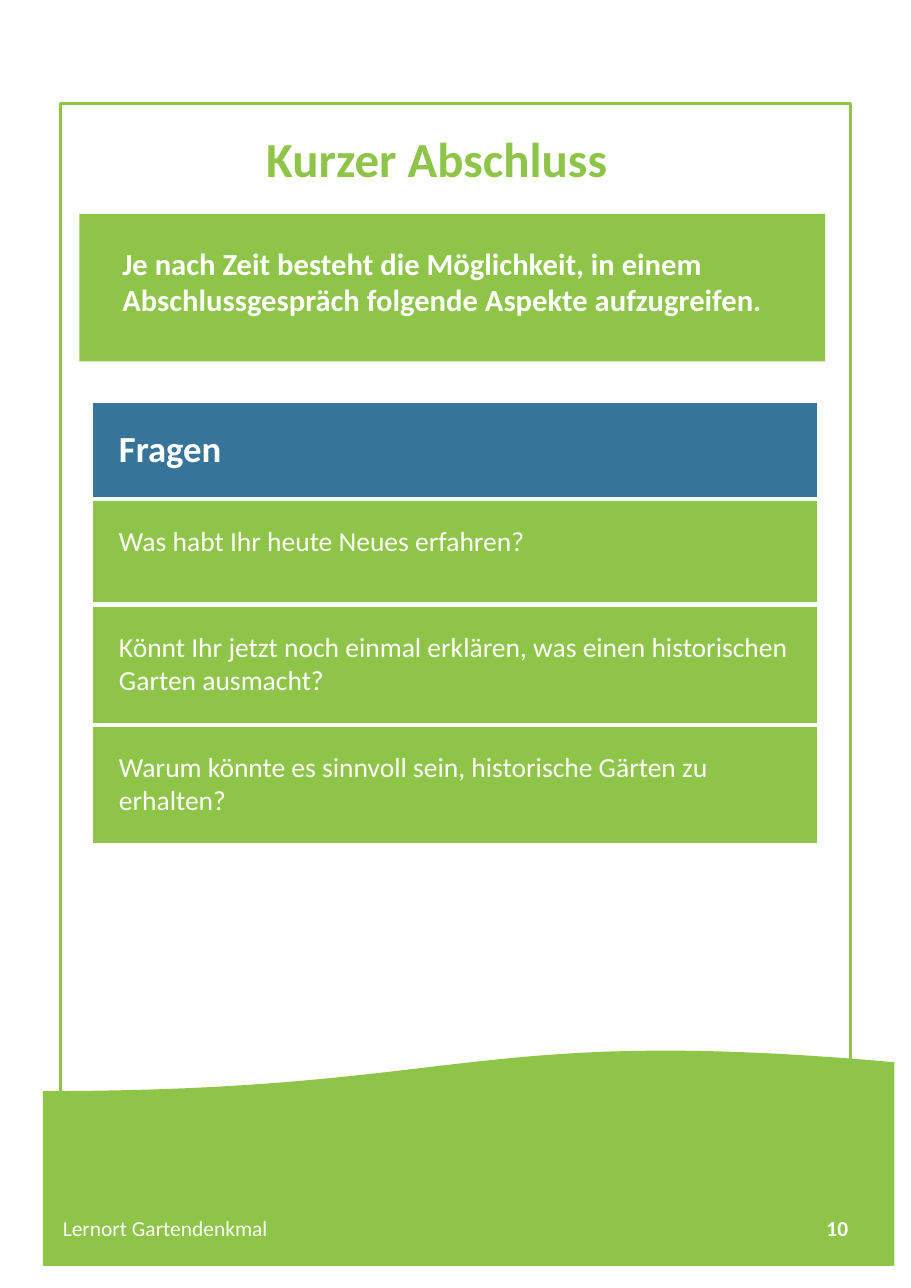
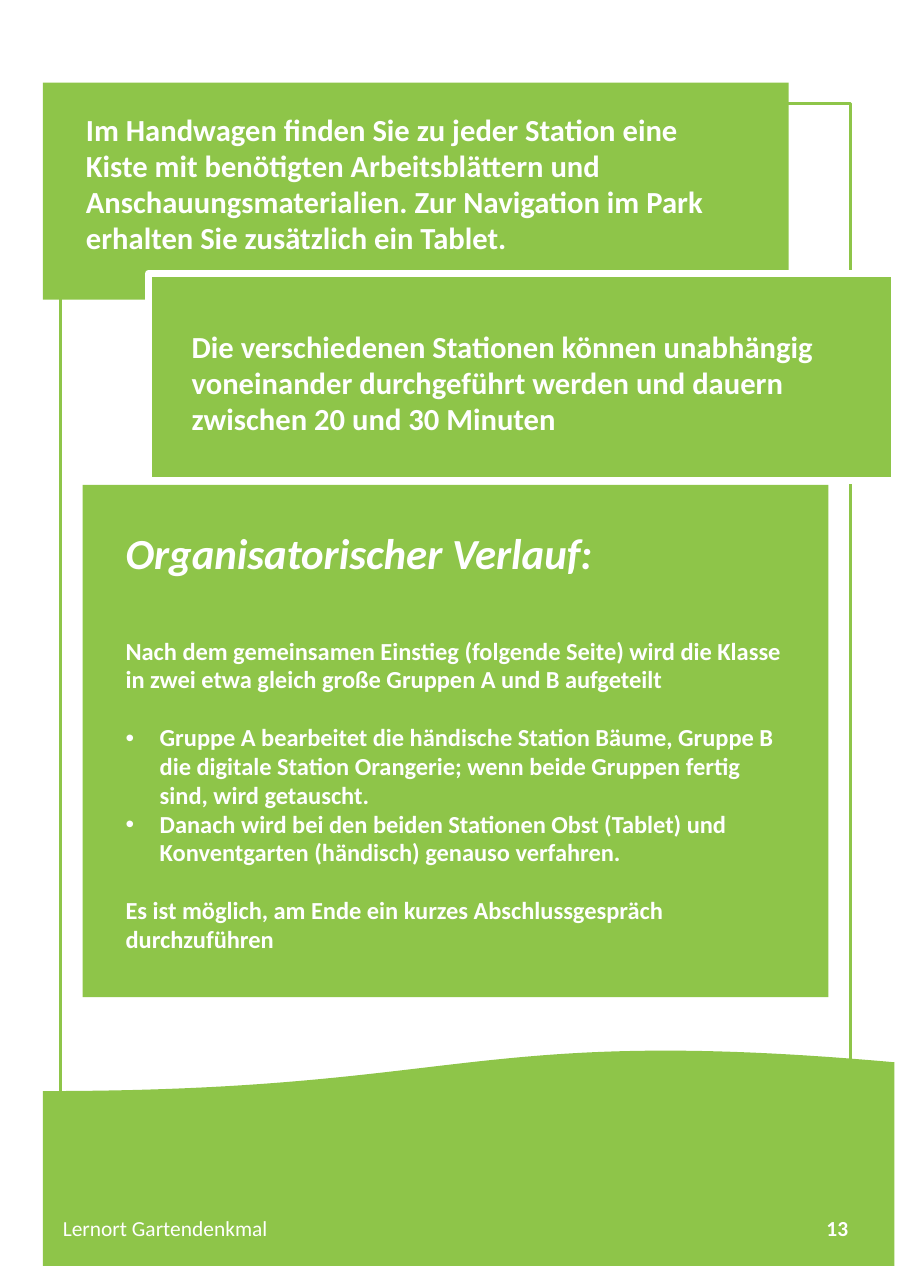
from dataclasses import dataclass
from lxml.etree import SubElement
from pptx import Presentation
from pptx.dml.color import RGBColor
from pptx.enum.shapes import MSO_SHAPE
from pptx.enum.text import MSO_ANCHOR, MSO_AUTO_SIZE, PP_ALIGN
from pptx.oxml import parse_xml
from pptx.oxml.ns import nsdecls, qn
from pptx.util import Inches, Pt


@dataclass(frozen=True)
class Theme:
    """Colours, font and type sizes that the slides share."""
    green: str = "8EC549"
    blue: str = "367499"
    white: str = "FFFFFF"
    font: str = "Calibri"
    title: int = 32
    head: int = 28
    label: int = 24
    lead: int = 20
    cell: int = 18
    body: int = 16
    foot: int = 14
    lines: float = 0.98


LOOK = Theme()
PAGE = (8.27, 11.69)
BAND = (0.39, 9.51, 7.73, 1.98)
FRAME = (0.55, 0.94, 7.17, 9.82)
INSET = (0.39, 0.2, 0.39, 0.39)


def put(item, vals):
    """Set each named attribute of an object."""
    for name, val in vals.items():
        setattr(item, name, val)


def place(shape, box):
    """Move a shape to a box given in inches."""
    put(shape, dict(zip(("left", "top", "width", "height"), map(Inches, box))))


def paint(shape, fill=None, line=None, width=0):
    """Give a shape its fill and outline."""
    if fill:
        shape.fill.solid()
        shape.fill.fore_color.rgb = RGBColor.from_string(fill)
    else:
        shape.fill.background()
    if line:
        shape.line.color.rgb = RGBColor.from_string(line)
        shape.line.width = Pt(width)
    else:
        shape.line.fill.background()


def style(run, size, bold=True, color=LOOK.white, italic=False):
    """Format one run of text."""
    put(run.font, {"name": LOOK.font, "size": Pt(size), "bold": bold, "italic": italic})
    run.font.color.rgb = RGBColor.from_string(color)


def write(frame, items, size, inset=INSET, anchor=MSO_ANCHOR.BOTTOM,
          align=PP_ALIGN.LEFT, **look):
    """Fill a text frame from (text, bullet, space before) items."""
    sides = ("margin_left", "margin_top", "margin_right", "margin_bottom")
    put(frame, dict(zip(sides, map(Inches, inset))))
    put(frame, {"word_wrap": True, "auto_size": MSO_AUTO_SIZE.NONE,
                "vertical_anchor": anchor})
    for num, (text, dot, gap) in enumerate(items):
        para = frame.add_paragraph() if num else frame.paragraphs[0]
        props = para._p.get_or_add_pPr()
        hang = Inches(0.31) if dot else 0
        props.set("marL", str(hang))
        props.set("indent", str(-hang))
        if dot:
            SubElement(props, qn("a:buFont")).set("typeface", "Arial")
            SubElement(props, qn("a:buChar")).set("char", "•")
        else:
            SubElement(props, qn("a:buNone"))
        put(para, {"alignment": align, "line_spacing": LOOK.lines,
                   "space_before": Pt(gap), "space_after": Pt(0)})
        run = para.add_run()
        run.text = text
        style(run, size, **look)


def draw(slide, kind, box, **look):
    """Add a preset shape without shadow."""
    shape = slide.shapes.add_shape(kind, *map(Inches, box))
    shape.shadow.inherit = False
    paint(shape, **look)
    return shape


def card(slide, box, text, **look):
    """Draw a green box with a bold lead text."""
    shape = draw(slide, MSO_SHAPE.RECTANGLE, box, fill=LOOK.green, **look)
    write(shape.text_frame, [(text, False, 0)], LOOK.lead)


def frame(slide, box):
    """Draw the green outline of the page."""
    draw(slide, MSO_SHAPE.RECTANGLE, box, line=LOOK.green, width=2.25)


def footer(slide, box, page):
    """Draw the wave with the footer text and page number."""
    left, top, wide, _ = box
    wave = draw(slide, MSO_SHAPE.FLOWCHART_DOCUMENT, box, fill=LOOK.green)
    wave.rotation = 180
    parts = (
        ("Lernort Gartendenkmal", 0.18, 2.02, (0, 0.05, 0.1, 0.05), PP_ALIGN.LEFT, False),
        (str(page), wide - 2.28, 1.86, (0.1, 0.05, 0, 0.05), PP_ALIGN.RIGHT, True),
    )
    for text, off, span, inset, align, bold in parts:
        spot = map(Inches, (left + off, top + 1.33, span, 0.62))
        note = slide.shapes.add_textbox(*spot)
        write(note.text_frame, [(text, False, 0)], LOOK.foot, inset,
              MSO_ANCHOR.MIDDLE, align, bold=bold)


def edge(cell):
    """Give a table cell white lines above and below."""
    props = cell._tc.get_or_add_tcPr()
    for tag in ("lnB", "lnT"):
        props.insert(0, parse_xml(
            f'<a:{tag} {nsdecls("a")} w="{Pt(3)}"><a:solidFill>'
            f'<a:srgbClr val="{LOOK.white}"/></a:solidFill></a:{tag}>'))


def grid(slide, box, rows):
    """Place the table of questions, its first row as heading."""
    table = slide.shapes.add_table(len(rows), 1, *map(Inches, box)).table
    put(table, {"first_row": False, "horz_banding": False})
    sides = ("margin_left", "margin_top", "margin_right", "margin_bottom")
    for num, (text, high) in enumerate(rows):
        table.rows[num].height = Inches(high)
        cell = table.cell(num, 0)
        put(cell, dict.fromkeys(sides, Inches(0.24)))
        cell.fill.solid()
        cell.fill.fore_color.rgb = RGBColor.from_string(LOOK.green if num else LOOK.blue)
        edge(cell)
        run = cell.text_frame.paragraphs[0].add_run()
        run.text = text
        style(run, LOOK.cell if num else LOOK.label, bold=not num)


def start(deck):
    """Add a slide and return it with its title and body."""
    slide = deck.slides.add_slide(deck.slide_layouts[1])
    return slide, slide.shapes.title, slide.placeholders[1]


def close(deck):
    """Build the slide with the closing questions."""
    slide, title, body = start(deck)
    place(title, (0.72, 1.02, 6.49, 1.09))
    write(title.text_frame, [("Kurzer Abschluss", False, 0)], LOOK.title,
          align=PP_ALIGN.CENTER, color=LOOK.green)
    place(body, (0.72, 1.94, 6.77, 1.34))
    paint(body, fill=LOOK.green)
    write(body.text_frame, [(
        "Je nach Zeit besteht die Möglichkeit, in einem Abschlussgespräch "
        "folgende Aspekte aufzugreifen.", False, 0)], LOOK.lead)
    footer(slide, BAND, 10)
    frame(slide, FRAME)
    grid(slide, (0.84, 3.64, 6.58, 4), (
        ("Fragen", 0.88),
        ("Was habt Ihr heute Neues erfahren?", 0.96),
        ("Könnt Ihr jetzt noch einmal erklären, was einen historischen "
         "Garten ausmacht?", 1.08),
        ("Warum könnte es sinnvoll sein, historische Gärten zu erhalten?", 1.08),
    ))


def course(slide, title, body, box):
    """Place the heading card and the list within it."""
    left, top, wide, high = box
    place(title, box)
    paint(title, fill=LOOK.green)
    write(title.text_frame, [("Organisatorischer Verlauf:", False, 0)], LOOK.head,
          (0.39, 0.4, 0.39, 0.39), MSO_ANCHOR.TOP, italic=True)
    place(body, (left, top + 1, wide, high - 1))
    write(body.text_frame, (
        ("Nach dem gemeinsamen Einstieg (folgende Seite) wird die Klasse in "
         "zwei etwa gleich große Gruppen A und B aufgeteilt", False, 0),
        ("Gruppe A bearbeitet die händische Station Bäume, Gruppe B die "
         "digitale Station Orangerie; wenn beide Gruppen fertig sind, "
         "wird getauscht.", True, 19),
        ("Danach wird bei den beiden Stationen Obst (Tablet) und "
         "Konventgarten (händisch) genauso verfahren.", True, 0),
        ("Es ist möglich, am Ende ein kurzes Abschlussgespräch "
         "durchzuführen", False, 19),
    ), LOOK.body)


def plan(deck):
    """Build the slide on how the visit runs."""
    slide, title, body = start(deck)
    course(slide, title, body, (0.75, 4.4, 6.77, 4.65))
    footer(slide, BAND, 13)
    card(slide, (0.39, 0.75, 6.77, 1.97),
         "Im Handwagen finden Sie zu jeder Station eine Kiste mit benötigten "
         "Arbeitsblättern und Anschauungsmaterialien. Zur Navigation im Park "
         "erhalten Sie zusätzlich ein Tablet.")
    frame(slide, FRAME)
    card(slide, (1.35, 2.48, 6.77, 1.88),
         "Die verschiedenen Stationen können unabhängig voneinander "
         "durchgeführt werden und dauern zwischen 20 und 30 Minuten",
         line=LOOK.white, width=4.5)


def main():
    """Build and save the deck."""
    deck = Presentation()
    put(deck, dict(zip(("slide_width", "slide_height"), map(Inches, PAGE))))
    close(deck)
    plan(deck)
    deck.save("out.pptx")


if __name__ == "__main__":
    main()
